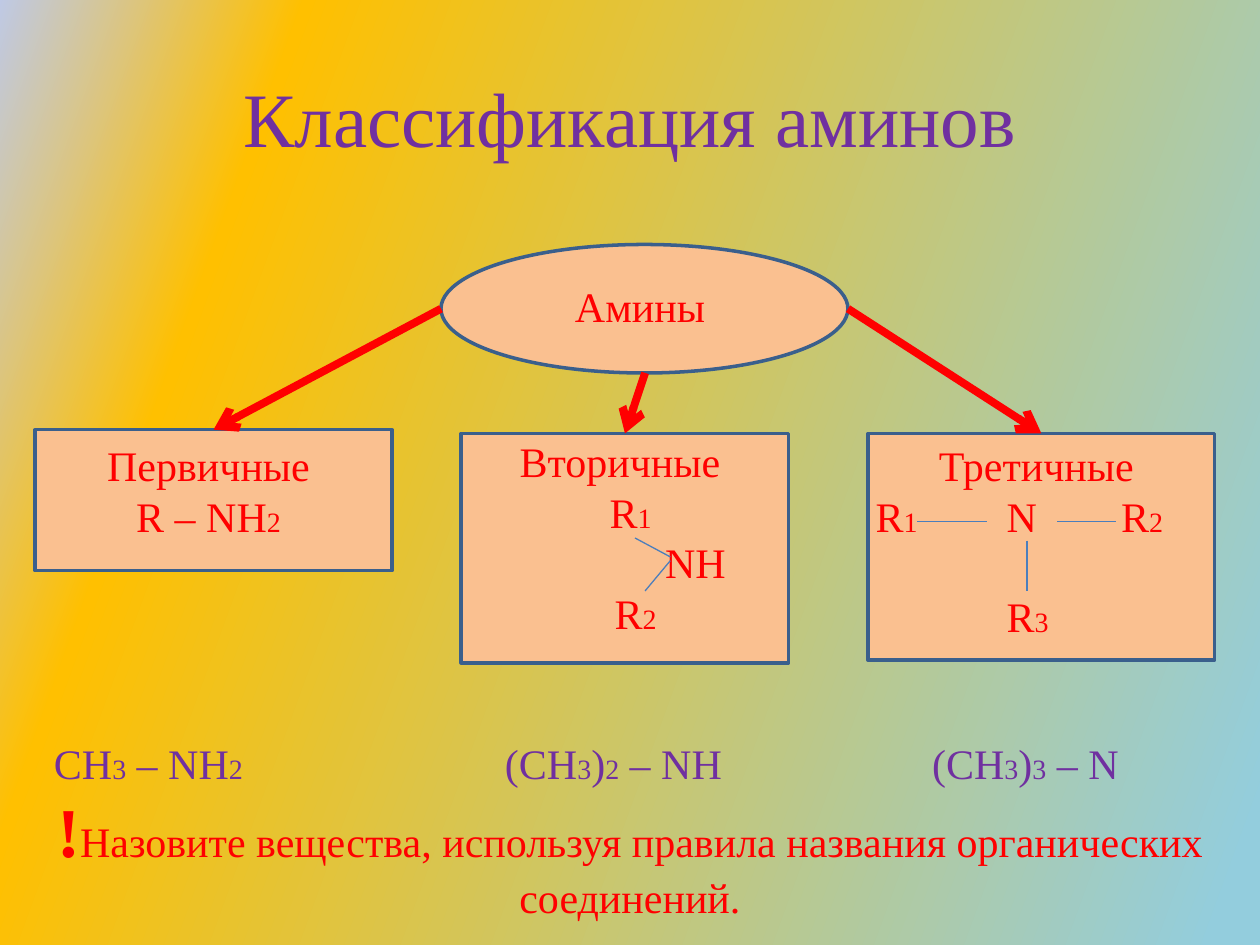
from itertools import groupby

from lxml import etree
from pptx import Presentation
from pptx.dml.color import RGBColor
from pptx.enum.shapes import MSO_CONNECTOR, MSO_SHAPE
from pptx.enum.text import MSO_ANCHOR, PP_ALIGN
from pptx.oxml import parse_xml
from pptx.oxml.ns import nsdecls, qn
from pptx.util import Inches, Pt

FONT = "Times New Roman"
RED = RGBColor(0xFF, 0x00, 0x00)
PURPLE = RGBColor(0x70, 0x30, 0xA0)
PEACH = RGBColor(0xFA, 0xC0, 0x90)
NAVY = RGBColor(0x3A, 0x5F, 0x8C)
BLUE = RGBColor(0x4B, 0x7E, 0xBC)
STOPS = [(0, "BFC9E5"), (19, "FFC000"), (97, "93CDDD")]


def paint_back(slide):
    stops = "".join(
        f'<a:gs pos="{pos * 1000}"><a:srgbClr val="{hue}"/></a:gs>'
        for pos, hue in STOPS
    )
    fill = parse_xml(
        f'<a:gradFill {nsdecls("a")} rotWithShape="1"><a:gsLst>{stops}</a:gsLst>'
        '<a:lin ang="1200000" scaled="0"/></a:gradFill>'
    )
    slide.background.fill.solid()
    old = slide._element.find(f".//{qn('p:bgPr')}/{qn('a:solidFill')}")
    old.getparent().replace(old, fill)


def add_form(slide, kind, box):
    form = slide.shapes.add_shape(kind, *map(Inches, box))
    form.shadow.inherit = False
    form.fill.solid()
    form.fill.fore_color.rgb = PEACH
    form.line.color.rgb = NAVY
    form.line.width = Pt(2)
    return form


def add_frame(slide, box):
    frame = slide.shapes.add_textbox(*map(Inches, box)).text_frame
    frame.word_wrap = True
    return frame


def add_run(para, text, color, size=24, bold=False):
    run = para.add_run()
    run.text = text
    font = run.font
    font.name, font.size, font.bold = FONT, Pt(size), bold
    font.color.rgb = color


def add_para(frame, tabs=()):
    """Return the next paragraph: centred, or set on the given tab stops."""
    first = frame.paragraphs[0]
    para = frame.add_paragraph() if first.runs else first
    para.alignment = PP_ALIGN.LEFT if tabs else PP_ALIGN.CENTER
    if tabs:
        stops = etree.SubElement(para._p.get_or_add_pPr(), qn("a:tabLst"))
        for tab in tabs:
            etree.SubElement(
                stops, qn("a:tab"), pos=str(Inches(tab)), algn="l"
            )
    return para


def add_formula(para, text, color):
    """Write a formula with its digits set small."""
    for small, part in groupby(text, str.isdigit):
        add_run(para, "".join(part), color, 16 if small else 24)


def add_line(slide, start, end, color, width):
    line = slide.shapes.add_connector(
        MSO_CONNECTOR.STRAIGHT, *map(Inches, start + end)
    )
    line.line.color.rgb = color
    line.line.width = Pt(width)
    etree.SubElement(line._element.spPr, qn("a:effectLst"))
    return line


def add_arrow(slide, start, target):
    """Draw an arrow from a point to the top of a rectangle."""
    arrow = add_line(slide, start, start, RED, 4.5)
    arrow.end_connect(target, 0)
    etree.SubElement(arrow.line._get_or_add_ln(), qn("a:tailEnd"), type="arrow")


def add_class(slide, box, top, name, rows):
    """Add a box for one class; rows hold text, tab stops and space before."""
    form = add_form(slide, MSO_SHAPE.RECTANGLE, box)
    left, _, width, height = box
    frame = add_frame(slide, (left - 0.04, top, width, height))
    add_run(add_para(frame), name, RED)
    for text, tabs, gap in rows:
        para = add_para(frame, tabs)
        para.space_before = Pt(gap)
        add_formula(para, text, RED)
    return form


def main():
    deck = Presentation()
    deck.slide_width, deck.slide_height = Inches(10), Inches(7.5)
    slide = deck.slides.add_slide(deck.slide_layouts[6])
    paint_back(slide)

    title = add_frame(slide, (0.5, 0.3, 9, 1.25))
    title.vertical_anchor = MSO_ANCHOR.MIDDLE
    add_run(add_para(title), "Классификация аминов", PURPLE, 44)

    add_form(slide, MSO_SHAPE.OVAL, (3.5, 1.94, 3.23, 1.02))
    add_run(add_para(add_frame(slide, (3.78, 2.18, 2.6, 0.5))), "Амины", RED)

    first = add_class(
        slide, (0.28, 3.41, 2.83, 1.12), 3.44, "Первичные", [("R – NH2", (), 0)]
    )
    second = add_class(
        slide, (3.66, 3.44, 2.6, 1.82), 3.41, "Вторичные",
        [("\tR1", [1.12], 0), ("\tNH", [1.56], 0), ("\tR2", [1.16], 0)],
    )
    third = add_class(
        slide, (6.89, 3.44, 2.75, 1.8), 3.44, "Третичные",
        [("R1\tN\tR2", [1.04, 1.95], 0), ("\tR3", [1.04], 28.8)],
    )

    bonds = [
        ((5.04, 4.27), (5.32, 4.42)),
        ((5.12, 4.69), (5.32, 4.45)),
        ((7.28, 4.14), (7.83, 4.14)),
        ((8.39, 4.14), (8.86, 4.14)),
        ((8.15, 4.29), (8.15, 4.69)),
    ]
    for start, end in bonds:
        add_line(slide, start, end, BLUE, 0.75)

    task = add_frame(slide, (0, 5.8, 10, 1.58))
    samples = add_para(task, [0.33, 3.91, 7.3])
    add_formula(samples, "\tCH3 – NH2\t(CH3)2 – NH\t(CH3)3 – N", PURPLE)
    order = add_para(task)
    add_run(order, "!", RED, 40, True)
    add_run(
        order,
        "Назовите вещества, используя правила названия органических соединений.",
        RED,
    )

    add_arrow(slide, (3.5, 2.45), first)
    add_arrow(slide, (5.12, 2.96), second)
    add_arrow(slide, (6.73, 2.45), third)
    deck.save("out.pptx")


if __name__ == "__main__":
    main()
